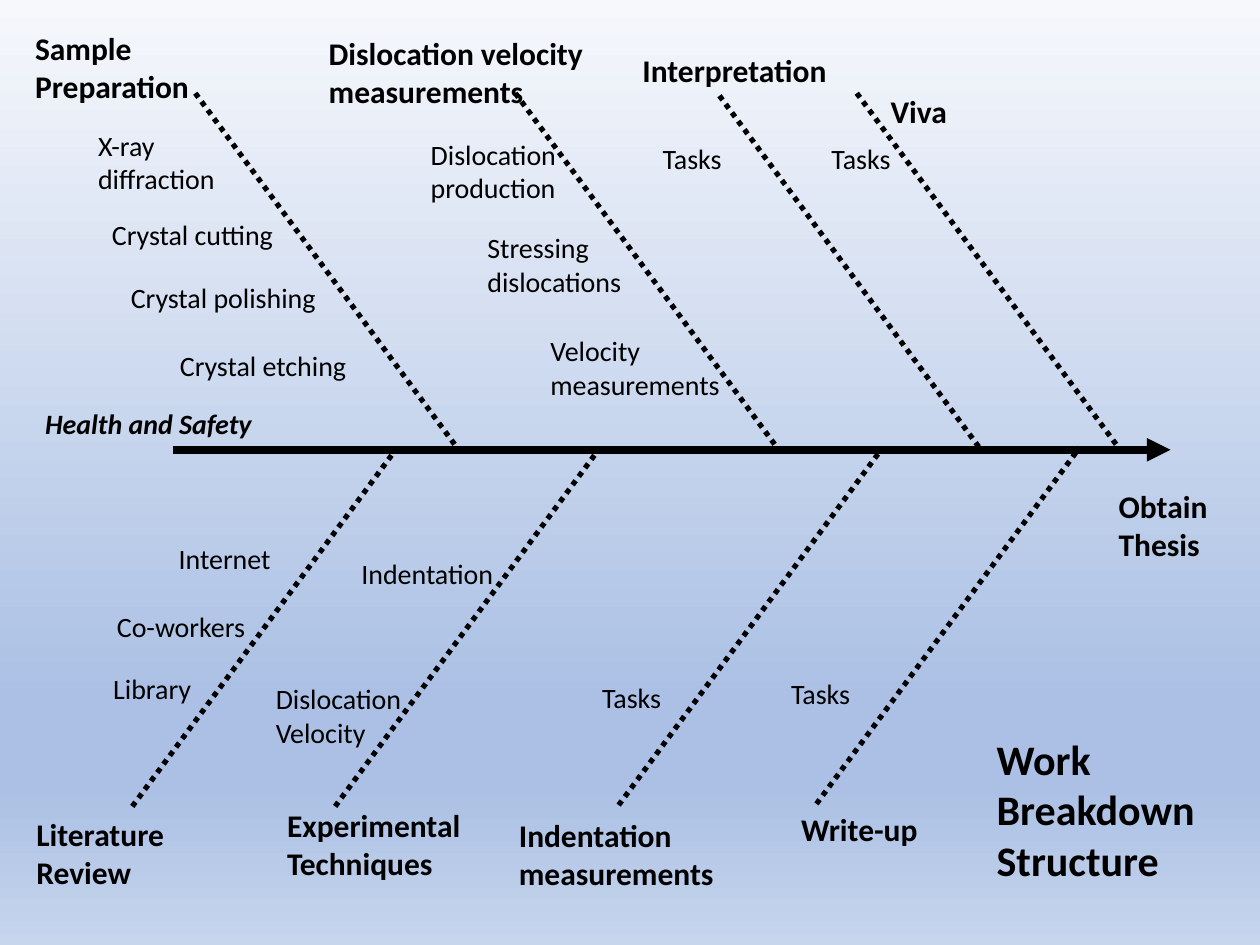
from lxml import etree
from pptx import Presentation
from pptx import util as u
from pptx.dml.color import RGBColor
from pptx.enum import dml, shapes, text
from pptx.oxml.ns import qn

BLACK = RGBColor(0x00, 0x00, 0x00)
SKY = [
    (0, RGBColor(0xF6, 0xF8, 0xFC)),
    (74, RGBColor(0xAB, 0xC0, 0xE4)),
    (83, RGBColor(0xAB, 0xC0, 0xE4)),
    (100, RGBColor(0xC7, 0xD5, 0xED)),
]
FONT = "Calibri"
SPINE_Y = 3.57
BONE_DX, BONE_DY = 2.09, 2.83

UPPER_TIPS = [(1.55, 0.74), (4.09, 0.74), (5.71, 0.76), (6.8, 0.74)]
LOWER_TIPS = [(1.05, 6.4), (2.66, 6.4), (4.91, 6.39), (6.48, 6.38)]

STAGES = [
    (0.18, 0.18, 1.59, ["Sample", "Preparation"]),
    (2.51, 0.22, 2.55, ["Dislocation velocity", "measurements"]),
    (5, 0.36, 1.81, ["Interpretation"]),
    (6.97, 0.68, 0.72, ["Viva"]),
    (0.19, 6.42, 1.42, ["Literature", "Review"]),
    (2.18, 6.35, 1.77, ["Experimental", "Techniques"]),
    (4.02, 6.43, 1.97, ["Indentation", "measurements"]),
    (6.26, 6.38, 1.22, ["Write-up"]),
    (8.78, 3.82, 0.99, ["Obtain", "Thesis"]),
]
TASKS = [
    (0.68, 0.97, 1.16, ["X-ray", "diffraction"]),
    (0.79, 1.68, 1.61, ["Crystal cutting"]),
    (0.94, 2.18, 1.83, ["Crystal polishing"]),
    (1.33, 2.72, 1.67, ["Crystal etching"]),
    (3.32, 1.04, 1.28, ["Dislocation", "production"]),
    (3.77, 1.78, 1.36, ["Stressing", "dislocations"]),
    (4.27, 2.6, 1.67, ["Velocity", "measurements"]),
    (5.16, 1.07, 0.79, ["Tasks"]),
    (6.5, 1.07, 0.79, ["Tasks"]),
    (1.32, 4.25, 0.96, ["Internet"]),
    (0.83, 4.79, 1.34, ["Co-workers"]),
    (0.8, 5.28, 0.88, ["Library"]),
    (2.77, 4.37, 1.3, ["Indentation"]),
    (2.09, 5.36, 1.28, ["Dislocation", "Velocity"]),
    (4.68, 5.35, 0.79, ["Tasks"]),
    (6.18, 5.32, 0.79, ["Tasks"]),
]


class Fishbone:
    """Draws the parts of a fishbone diagram on one slide in a single style."""

    def __init__(self, prs):
        self.s = prs.slides.add_slide(prs.slide_layouts[5])

    def background(self, stops):
        fill = self.s.background.fill
        fill.gradient()
        fill.gradient_angle = 270
        gs_list = next(self.s.element.iter(qn("a:gsLst")))
        for gs in list(gs_list):
            gs_list.remove(gs)
        for pos, color in stops:
            gs = etree.SubElement(gs_list, qn("a:gs"), pos=str(pos * 1000))
            etree.SubElement(gs, qn("a:srgbClr"), val=str(color))

    def add_lines(self, tf, lines, size, bold, italic=False):
        for i, line in enumerate(lines):
            p = tf.paragraphs[0] if i == 0 else tf.add_paragraph()
            p.alignment = text.PP_ALIGN.LEFT
            r = p.add_run()
            r.text = line
            r.font.name = FONT
            r.font.size = u.Pt(size)
            r.font.bold = bold
            r.font.italic = italic
            r.font.color.rgb = BLACK

    def title(self, x, y, w, h, lines):
        sp = self.s.shapes.title
        sp.left, sp.top, sp.width, sp.height = map(u.Inches, (x, y, w, h))
        tf = sp.text_frame
        tf.word_wrap = True
        tf.auto_size = text.MSO_AUTO_SIZE.NONE
        tf.vertical_anchor = text.MSO_ANCHOR.TOP
        self.add_lines(tf, lines, 24, True)

    def label(self, x, y, w, lines, size=16, bold=False, italic=False):
        h = 0.1 + len(lines) * size / 60
        sp = self.s.shapes.add_textbox(*map(u.Inches, (x, y, w, h)))
        tf = sp.text_frame
        tf.word_wrap = False
        tf.auto_size = text.MSO_AUTO_SIZE.SHAPE_TO_FIT_TEXT
        self.add_lines(tf, lines, size, bold, italic)

    def line(self, x1, y1, x2, y2, width):
        sp = self.s.shapes.add_connector(
            shapes.MSO_CONNECTOR.STRAIGHT, *map(u.Inches, (x1, y1, x2, y2))
        )
        sp.line.color.rgb = BLACK
        sp.line.width = u.Pt(width)
        etree.SubElement(sp.element.spPr, qn("a:effectLst"))
        return sp

    def bone(self, x, y, dy):
        sp = self.line(x, y, x + BONE_DX, y + dy, 3)
        sp.line.dash_style = dml.MSO_LINE.ROUND_DOT

    def spine(self, x1, x2):
        sp = self.line(x1, SPINE_Y, x2, SPINE_Y, 4.5)
        ln = sp.element.spPr.find(qn("a:ln"))
        etree.SubElement(ln, qn("a:tailEnd"), type="triangle")


def main():
    prs = Presentation()
    prs.slide_width, prs.slide_height = u.Inches(10), u.Inches(7.5)
    fish = Fishbone(prs)
    fish.background(SKY)
    fish.title(7.81, 5.77, 2, 1.3, ["Work", "Breakdown", "Structure"])
    fish.spine(1.37, 9.29)
    for x, y in UPPER_TIPS:
        fish.bone(x, y, BONE_DY)
    for x, y in LOWER_TIPS:
        fish.bone(x, y, -BONE_DY)
    for x, y, w, lines in STAGES:
        fish.label(x, y, w, lines, size=18, bold=True)
    for x, y, w, lines in TASKS:
        fish.label(x, y, w, lines)
    fish.label(0.26, 3.18, 2.07, ["Health and Safety"], bold=True, italic=True)
    prs.save("out.pptx")


if __name__ == "__main__":
    main()
